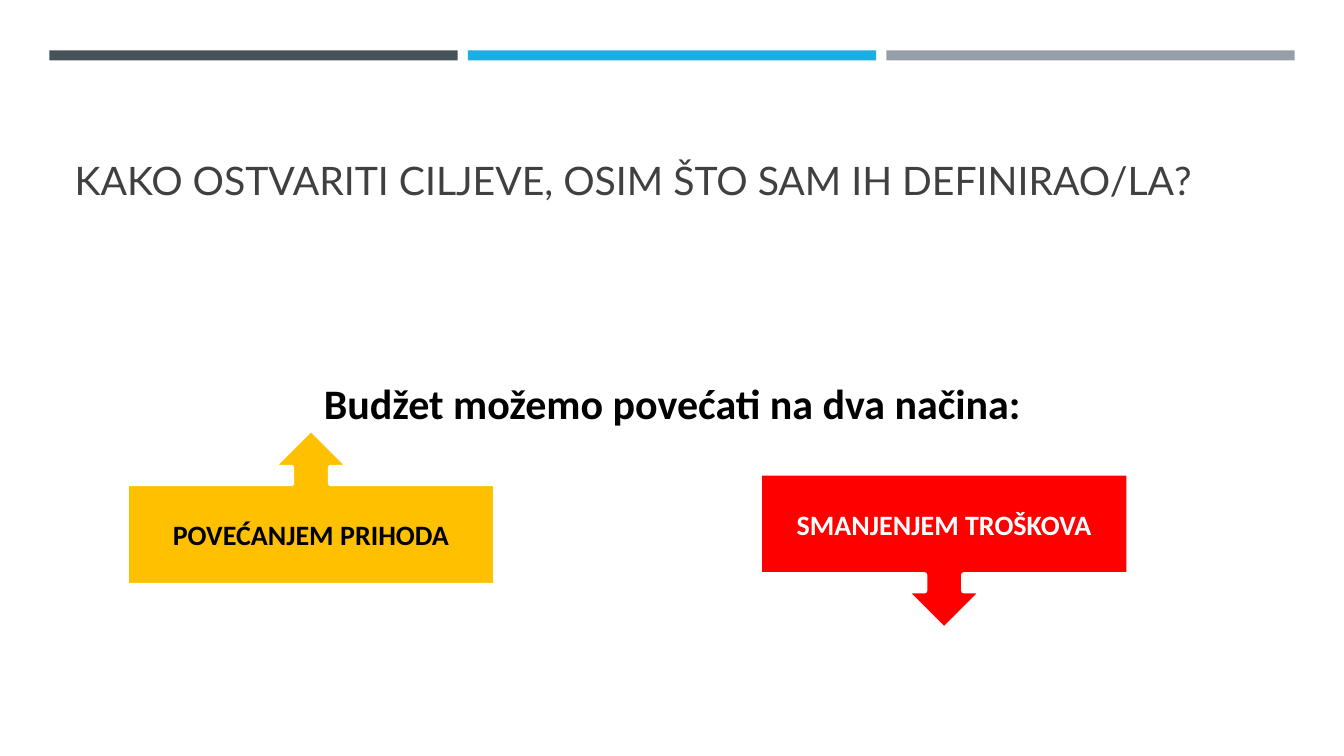
from pptx import Presentation
from pptx import util as u
from pptx.dml.color import RGBColor
from pptx.enum import shapes, text
from pptx.oxml.ns import qn
from lxml import etree


def color(value):
    return RGBColor.from_string(value)


def place(shape, left, top, width, height):
    shape.left, shape.top = u.Inches(left), u.Inches(top)
    shape.width, shape.height = u.Inches(width), u.Inches(height)


def write(shape, words, font_name, size, font_color, bold, alignment, anchor):
    frame = shape.text_frame
    frame.word_wrap = True
    frame.auto_size = text.MSO_AUTO_SIZE.NONE
    frame.vertical_anchor = anchor
    paragraph = frame.paragraphs[0]
    paragraph.text = words
    paragraph.alignment = alignment
    font = paragraph.font
    font.name, font.size, font.bold = font_name, u.Pt(size), bold
    font.color.rgb = color(font_color)
    return paragraph


def add_filled_shape(slide, kind, left, top, width, height, fill):
    shape = slide.shapes.add_shape(
        kind, u.Inches(left), u.Inches(top), u.Inches(width), u.Inches(height))
    shape.shadow.inherit = False
    shape.fill.solid()
    shape.fill.fore_color.rgb = color(fill)
    shape.line.fill.background()
    return shape


def add_top_bars(slide, left, top, width, height):
    gap = 0.1
    bar_width = (width - 2 * gap) / 3
    for index, fill in enumerate(("465359", "1CADE4", "969FA7")):
        add_filled_shape(slide, shapes.MSO_SHAPE.RECTANGLE,
                         left + index * (bar_width + gap), top, bar_width, height, fill)


def add_title(slide, left, top, width, height):
    title = slide.shapes.title
    place(title, left, top, width, height)
    write(title, "KAKO OSTVARITI CILJEVE, OSIM ŠTO SAM IH DEFINIRAO/LA?",
          "Lato", 28, "404040", False, text.PP_ALIGN.LEFT, text.MSO_ANCHOR.BOTTOM)


def add_lead(slide, left, top, width, height):
    body = slide.placeholders[1]
    place(body, left, top, width, height)
    paragraph = write(body, "Budžet možemo povećati na dva načina:",
                      "Calibri", 30, "000000", True,
                      text.PP_ALIGN.CENTER, text.MSO_ANCHOR.MIDDLE)
    body.text_frame.margin_bottom = u.Inches(1.2)
    paragraph.line_spacing = 1.1
    paragraph.space_before = u.Pt(0)
    properties = paragraph._p.get_or_add_pPr()
    properties.set("marL", "0")
    properties.set("indent", "0")
    etree.SubElement(properties, qn("a:buNone"))
    default_font = properties.find(qn("a:defRPr"))
    if default_font is not None:
        properties.append(default_font)


def add_callout(slide, kind, left, top, width, height, words, fill, font_color):
    callout = add_filled_shape(slide, kind, left, top, width, height, fill)
    callout.line.color.rgb = color("FFFFFF")
    callout.line.width = u.Pt(4)
    for index, value in enumerate((0.25, 0.25, 0.25, 0.65)):
        callout.adjustments[index] = value
    write(callout, words, "Calibri", 20, font_color, True,
          text.PP_ALIGN.CENTER, text.MSO_ANCHOR.MIDDLE)


def main():
    presentation = Presentation()
    presentation.slide_width = u.Inches(13.33)
    presentation.slide_height = u.Inches(7.5)
    slide = presentation.slides.add_slide(presentation.slide_layouts[1])
    add_top_bars(slide, 0.49, 0.5, 12.35, 0.1)
    add_title(slide, 0.64, 0.77, 12.06, 1.3)
    add_lead(slide, 0.64, 2.56, 12.06, 3.97)
    add_callout(slide, shapes.MSO_SHAPE.UP_ARROW_CALLOUT, 1.25, 4.25, 3.67, 1.56,
                "POVEĆANJEM PRIHODA", "FFC000", "000000")
    add_callout(slide, shapes.MSO_SHAPE.DOWN_ARROW_CALLOUT, 7.53, 4.69, 3.67, 1.56,
                "SMANJENJEM TROŠKOVA", "FF0000", "FFFFFF")
    presentation.save("out.pptx")


if __name__ == "__main__":
    main()
